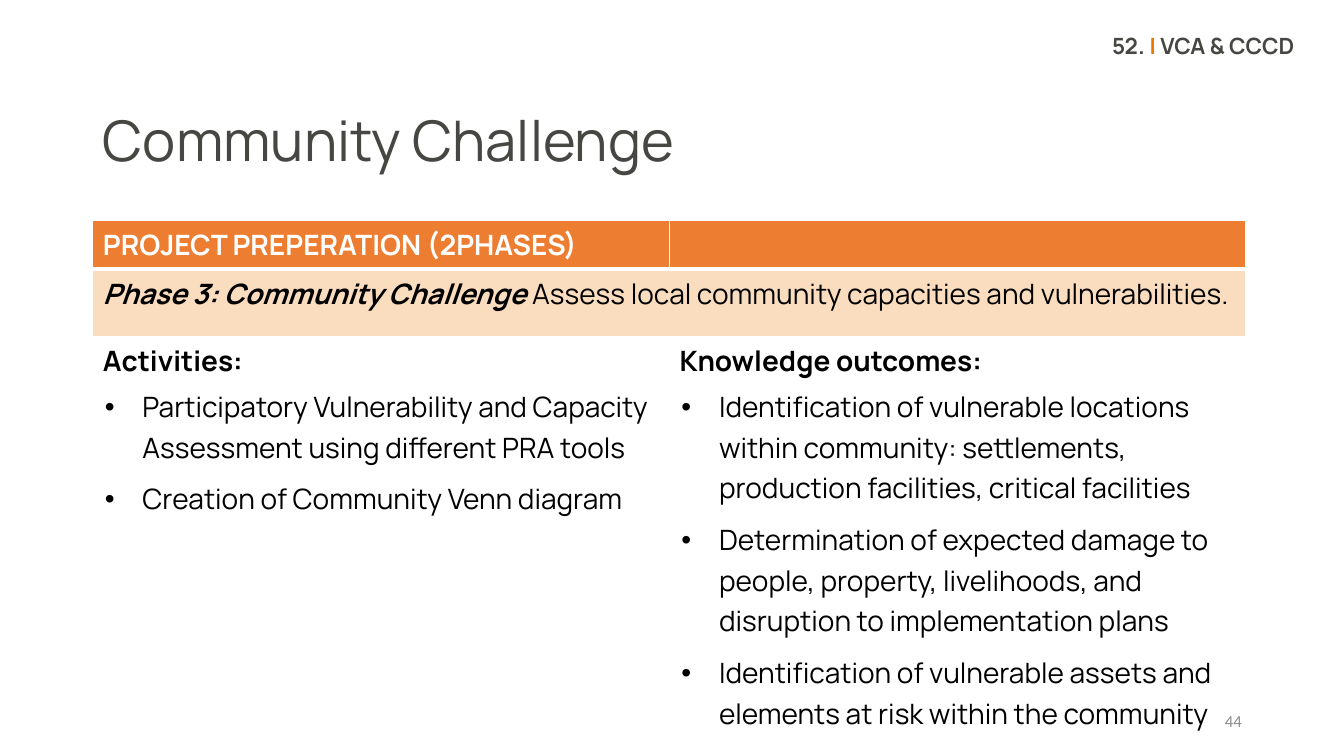
from lxml import etree
from pptx import Presentation
from pptx.dml.color import RGBColor
from pptx.enum.text import MSO_ANCHOR, PP_ALIGN
from pptx.oxml.ns import qn
from pptx.util import Cm, Pt

LEFT, RIGHT = PP_ALIGN.LEFT, PP_ALIGN.RIGHT
TOP, MIDDLE = MSO_ANCHOR.TOP, MSO_ANCHOR.MIDDLE
WHITE = RGBColor(0xFF, 0xFF, 0xFF)
BLACK = RGBColor(0x00, 0x00, 0x00)
SLATE = RGBColor(0x46, 0x46, 0x43)
GREY = RGBColor(0x8C, 0x8C, 0x8C)
HEADER_ORANGE = RGBColor(0xED, 0x7D, 0x31)
ORANGE = RGBColor(0xEE, 0x74, 0x02)


def add_run(paragraph, text, size, color, bold=False, italic=False, font="Manrope"):
    run = paragraph.add_run()
    run.text = text
    run.font.name = font
    run.font.size = Pt(size)
    run.font.color.rgb = color
    run.font.bold = bold
    run.font.italic = italic


def set_borders(cell, bottom_width):
    """Draw white cell borders, 1 pt except at the bottom."""
    properties = cell._tc.get_or_add_tcPr()
    widths = {"a:lnL": 1, "a:lnR": 1, "a:lnT": 1, "a:lnB": bottom_width}
    for position, (side, width) in enumerate(widths.items()):
        line = etree.Element(qn(side), w=str(Pt(width)))
        fill = etree.SubElement(line, qn("a:solidFill"))
        etree.SubElement(fill, qn("a:srgbClr"), val=str(WHITE))
        properties.insert(position, line)


prs = Presentation()
prs.slide_width, prs.slide_height = Cm(33.87), Cm(19.05)
slide = prs.slides.add_slide(prs.slide_layouts[5])

title = slide.shapes.title
title.left, title.top, title.width, title.height = Cm(2.34), Cm(2.72), Cm(24.79), Cm(1.83)
title.text_frame.vertical_anchor = TOP
heading = title.text_frame.paragraphs[0]
heading.alignment = LEFT
heading.line_spacing = 0.9
add_run(heading, "Community Challenge", 40, SLATE)

row_heights = [1.19, 1.7, 1.23, 8.76]
table = slide.shapes.add_table(
    4, 2, Cm(2.34), Cm(5.56), Cm(29.06), Cm(sum(row_heights))
).table
for row, height in zip(table.rows, row_heights):
    row.height = Cm(height)
for column in table.columns:
    column.width = Cm(14.53)

for row_index in range(4):
    for column_index in range(2):
        cell = table.cell(row_index, column_index)
        if row_index == 0:
            cell.fill.solid()
            cell.fill.fore_color.rgb = HEADER_ORANGE
        elif row_index == 1:
            cell.fill.solid()
            cell.fill.fore_color.rgb = ORANGE
            color = cell._tc.tcPr.find(".//" + qn("a:srgbClr"))
            etree.SubElement(color, qn("a:alpha"), val="25000")
        elif row_index == 2:
            cell.fill.background()
        else:
            cell.fill.solid()
            cell.fill.fore_color.rgb = WHITE
        set_borders(cell, 3 if row_index == 0 else 1)

add_run(table.cell(0, 0).text_frame.paragraphs[0],
        "PROJECT PREPERATION (2PHASES)", 20, WHITE, bold=True)

phase_cell = table.cell(1, 0)
phase_cell.merge(table.cell(1, 1))
phase = phase_cell.text_frame.paragraphs[0]
add_run(phase, "Phase 3: Community Challenge ", 20, BLACK, bold=True, italic=True)
add_run(phase, "Assess local community capacities and vulnerabilities.", 20, BLACK)

topics = [
    ("Activities:", [
        "Participatory Vulnerability and Capacity Assessment using different PRA tools",
        "Creation of Community Venn diagram",
    ]),
    ("Knowledge outcomes:", [
        "Identification of vulnerable locations within community: settlements, "
        "production facilities, critical facilities",
        "Determination of expected damage to people, property, livelihoods, "
        "and disruption to implementation plans",
        "Identification of vulnerable assets and elements at risk within the community",
    ]),
]
for column_index, (topic, points) in enumerate(topics):
    add_run(table.cell(2, column_index).text_frame.paragraphs[0],
            topic, 20, BLACK, bold=True)
    points_cell = table.cell(3, column_index)
    points_cell.margin_left = points_cell.margin_right = Cm(0.3)
    points_cell.margin_top = points_cell.margin_bottom = 0
    for index, point in enumerate(points):
        frame = points_cell.text_frame
        bullet = frame.paragraphs[0] if index == 0 else frame.add_paragraph()
        bullet.line_spacing = 1.06
        bullet.space_after = Pt(8)
        properties = bullet._p.get_or_add_pPr()
        properties.set("marL", str(Cm(0.95)))
        properties.set("indent", str(Cm(-0.95)))
        etree.SubElement(properties, qn("a:buFont"), typeface="Arial")
        etree.SubElement(properties, qn("a:buChar"), char="•")
        add_run(bullet, point, 20, BLACK)

section_box = slide.shapes.add_textbox(Cm(20.27), Cm(0.76), Cm(12.6), Cm(2.77))
section_box.text_frame.word_wrap = True
section = section_box.text_frame.paragraphs[0]
section.alignment = RIGHT
section.line_spacing = 0.9
for text, color in [("52. ", SLATE), ("| ", ORANGE), ("VCA & CCCD", SLATE)]:
    add_run(section, text, 16, color, bold=True)

number_box = slide.shapes.add_textbox(Cm(23.93), Cm(17.65), Cm(7.62), Cm(1.02))
number_box.text_frame.word_wrap = True
number_box.text_frame.vertical_anchor = MIDDLE
number = number_box.text_frame.paragraphs[0]
number.alignment = RIGHT
add_run(number, "44", 12, GREY, font="Calibri")

prs.save("out.pptx")
